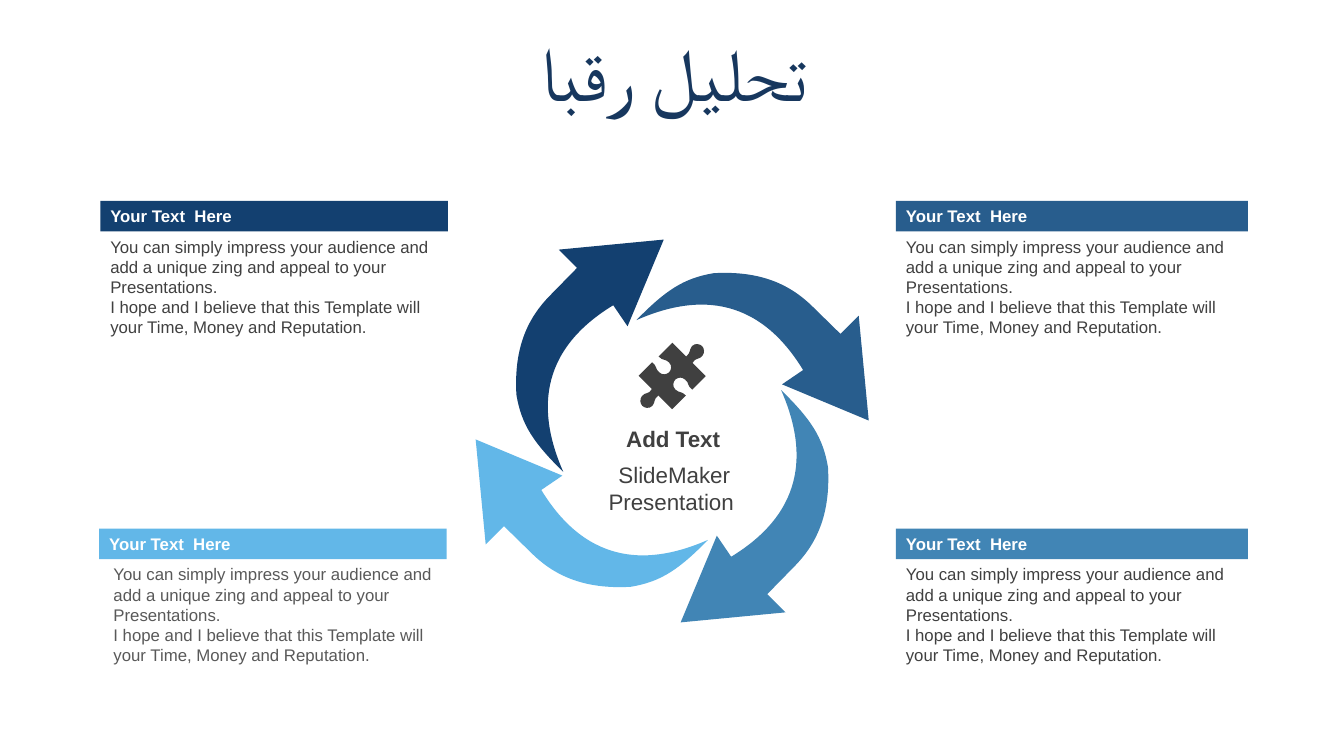
from lxml import etree
from pptx import Presentation
from pptx.dml.color import RGBColor
from pptx.enum.shapes import MSO_SHAPE
from pptx.enum.text import MSO_ANCHOR, PP_ALIGN
from pptx.oxml.ns import qn
from pptx.util import Cm, Pt

RECT = MSO_SHAPE.RECTANGLE
LEFT, CENTER = PP_ALIGN.LEFT, PP_ALIGN.CENTER
TOP, MIDDLE = MSO_ANCHOR.TOP, MSO_ANCHOR.MIDDLE
FONT = "Arial"

COLORS = {
    "title": "17375E", "navy": "134070", "blue": "285D8D", "steel": "4185B5",
    "sky": "62B7E8", "dark": "404040", "gray": "595959", "white": "FFFFFF",
}

TITLE = "تحلیل رقبا"
HEADING = "Your Text  Here"
BODY = [
    "You can simply impress your audience and add a unique zing and appeal to your Presentations.",
    "I hope and I believe that this Template will your Time, Money and Reputation.",
]
CENTER_HEADING = "Add Text"
CENTER_TEXT = "SlideMaker Presentation "

BAR_HEIGHT, BODY_HEIGHT = 0.77, 2.82
PANELS = [
    {"bar": 22.58, "body": 22.58, "top": 5.06, "width": 8.87, "fill": "blue", "ink": "dark"},
    {"bar": 22.58, "body": 22.58, "top": 13.32, "width": 8.87, "fill": "steel", "ink": "dark"},
    {"bar": 2.53, "body": 2.53, "top": 5.06, "width": 8.76, "fill": "navy", "ink": "dark"},
    {"bar": 2.5, "body": 2.61, "top": 13.32, "width": 8.76, "fill": "sky", "ink": "gray"},
]

ARROW_SIZE = (5.94, 4.04)
ARROWS = [("blue", 16.59, 6.71, 225), ("steel", 16.05, 11.33, 315),
          ("sky", 11.35, 10.92, 45), ("navy", 11.89, 6.35, 135)]
ARROW_PATH = [
    [(2.05, 4.04)], [(0, 2.35)], [(2.19, 1.45)], [(2.07, 2.08)],
    [(4.29, 2.62), (5.37, 1.44), (5.93, 0)],
    [(5.94, 1.04), (5.84, 1.58), (5.39, 2.21)],
    [(4.58, 3.12), (3.79, 3.38), (3, 3.38)],
    [(2.05, 3.39)],
]

PUZZLE_SIZE = (1.2, 2.13)
PUZZLE_BOX = (16.34, 8.41)
PUZZLE_TURN = 45
PUZZLE_START = [(0.6, 0)]
PUZZLE_SIDE = [
    [(0.68, 0), (0.77, 0.07), (0.78, 0.17)],
    [(0.8, 0.29), (0.68, 0.32), (0.73, 0.47)],
    [(1.2, 0.47)], [(1.2, 0.95)],
    [(1.05, 0.98), (1.02, 0.88), (0.9, 0.9)],
    [(0.78, 0.9), (0.73, 0.99), (0.72, 1.07)],
    [(0.72, 1.15), (0.78, 1.25), (0.9, 1.25)],
    [(1.05, 1.24), (1.02, 1.17), (1.19, 1.17)],
    [(1.19, 1.66)], [(0.7, 1.66)],
    [(0.68, 1.82), (0.76, 1.81), (0.78, 1.95)],
    [(0.78, 2.07), (0.67, 2.13), (0.6, 2.13)],
]


def half_turn(segments, size):
    return [[(size[0] - x, size[1] - y) for x, y in segment] for segment in segments]


def paint(sp, color):
    sp.shadow.inherit = False
    sp.fill.solid()
    sp.fill.fore_color.rgb = RGBColor.from_string(COLORS[color])
    sp.line.fill.background()


def add_outline(s, segments, place, size, turn, color):
    ends = [tuple(map(Cm, segment[-1])) for segment in segments]
    builder = s.shapes.build_freeform(*ends[0])
    builder.add_line_segments(ends[1:], close=True)
    sp = builder.convert_to_shape()
    outline = next(sp.element.iter(qn("a:path")))
    outline.set("w", str(Cm(size[0])))
    outline.set("h", str(Cm(size[1])))
    for command, segment in zip(list(outline), segments):
        if len(segment) == 3:
            command.tag = qn("a:cubicBezTo")
            for point in list(command):
                command.remove(point)
            for x, y in segment:
                etree.SubElement(command, qn("a:pt"), x=str(Cm(x)), y=str(Cm(y)))
    for name, value in zip(("left", "top", "width", "height"), (*place, *size)):
        setattr(sp, name, Cm(value))
    sp.rotation = turn
    paint(sp, color)


def write(sp, lines, size, color, bold=False, align=LEFT, anchor=TOP, **spacing):
    tf = sp.text_frame
    tf.word_wrap = True
    tf.vertical_anchor = anchor
    for i, line in enumerate(lines):
        p = tf.paragraphs[0] if i == 0 else tf.add_paragraph()
        for name, value in {"alignment": align, **spacing}.items():
            setattr(p, name, value)
        r = p.add_run()
        r.text = line
        for name, value in {"name": FONT, "size": Pt(size), "bold": bold}.items():
            setattr(r.font, name, value)
        r.font.color.rgb = RGBColor.from_string(COLORS[color])
        etree.SubElement(r._r.get_or_add_rPr(), qn("a:cs"), typeface=FONT)


def add_text(s, box, lines, size, color, **formats):
    sp = s.shapes.add_textbox(*map(Cm, box))
    write(sp, lines, size, color, **formats)


def add_panel(s, panel):
    top, width = panel["top"], panel["width"]
    bar = s.shapes.add_shape(RECT, *map(Cm, (panel["bar"], top, width, BAR_HEIGHT)))
    paint(bar, panel["fill"])
    write(bar, [HEADING], 12, "white", bold=True, anchor=MIDDLE)
    add_text(s, (panel["body"], top + BAR_HEIGHT, width, BODY_HEIGHT), BODY, 12, panel["ink"])


def main():
    prs = Presentation()
    prs.slide_width, prs.slide_height = Cm(33.87), Cm(19.05)
    s = prs.slides.add_slide(prs.slide_layouts[6])

    add_text(s, (0.89, 0.94, 32.16, 2.01), [TITLE], 54, "title",
             align=CENTER, anchor=MIDDLE, line_spacing=0.9)

    for color, x, y, turn in ARROWS:
        add_outline(s, ARROW_PATH, (x, y), ARROW_SIZE, turn, color)

    add_text(s, (14.91, 10.59, 4.11, 0.94), [CENTER_HEADING], 16, "dark",
             bold=True, align=CENTER)
    add_text(s, (14.94, 11.5, 4.11, 1.63), [CENTER_TEXT], 16, "dark", align=CENTER)

    for panel in PANELS:
        add_panel(s, panel)

    puzzle = [PUZZLE_START, *PUZZLE_SIDE, *half_turn(PUZZLE_SIDE, PUZZLE_SIZE)]
    add_outline(s, puzzle, PUZZLE_BOX, PUZZLE_SIZE, PUZZLE_TURN, "dark")
    prs.save("out.pptx")


if __name__ == "__main__":
    main()
